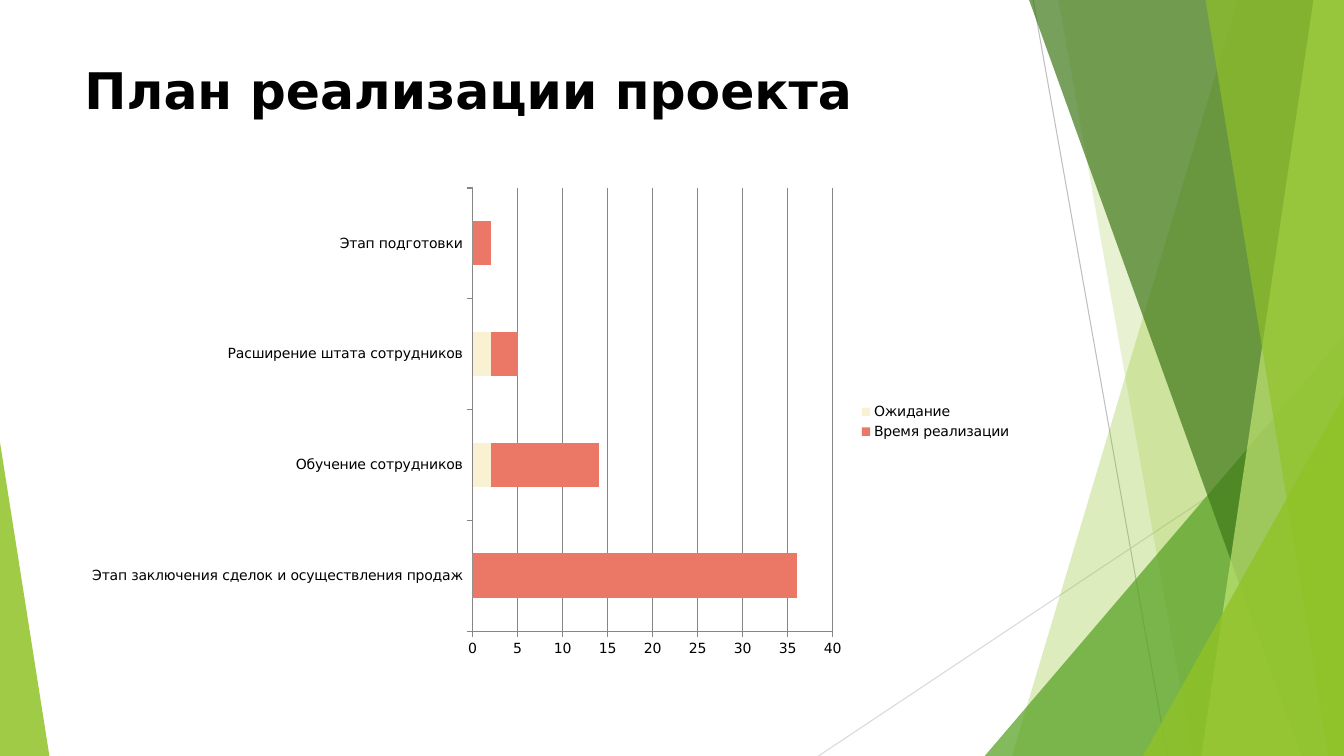
from collections import namedtuple

from lxml.etree import SubElement
from pptx import Presentation
from pptx.chart.data import CategoryChartData
from pptx.dml.color import RGBColor
from pptx.enum.chart import XL_CHART_TYPE, XL_LEGEND_POSITION, XL_TICK_MARK
from pptx.enum.shapes import MSO_CONNECTOR, MSO_SHAPE
from pptx.enum.text import MSO_ANCHOR, PP_ALIGN
from pptx.oxml.ns import qn
from pptx.util import Pt

Box = namedtuple("Box", "left top width height")

FONT = "DejaVu Sans"
BLACK, AXIS_GRAY = "000000", "868686"
LIME, GREEN, DARK_GREEN, PALE_LIME = "90C226", "54A021", "3F7819", "C0E474"

STAGES = [
    "Этап заключения сделок и осуществления продаж",
    "Обучение сотрудников",
    "Расширение штата сотрудников",
    "Этап подготовки",
]
DURATIONS = [
    ("Ожидание", (0, 2, 2, 0), "FAF1D2"),
    ("Время реализации", (36, 12, 3, 2), "EB7766"),
]


def rgb(hex_color):
    return RGBColor.from_string(hex_color)


def style_facet(facet, color, opacity):
    """Give a facet a translucent fill without line or shadow; opacity is in percent."""
    facet.fill.solid()
    facet.fill.fore_color.rgb = rgb(color)
    color_node = facet.fill._xPr.find(qn("a:solidFill"))[0]
    SubElement(color_node, qn("a:alpha"), val=str(opacity * 1000))
    facet.line.fill.background()
    facet.shadow.inherit = False


def add_ray(slide, box, start, end, color):
    """Draw a thin line between two points measured from the box corner."""
    ray = slide.shapes.add_connector(
        MSO_CONNECTOR.STRAIGHT,
        Pt(box.left + start[0]), Pt(box.top + start[1]),
        Pt(box.left + end[0]), Pt(box.top + end[1]),
    )
    ray.line.color.rgb = rgb(color)
    ray.line.width = Pt(0.75)
    SubElement(ray._element.spPr, qn("a:effectLst"))


def add_band(slide, box, top_left, bottom_left, color, opacity):
    """Fill from a slanted left edge to the right side of the box."""
    bottom = box.top + box.height
    right = box.left + box.width
    corners = [
        (box.left + top_left, box.top),
        (right, box.top),
        (right, bottom),
        (box.left + bottom_left, bottom),
    ]
    points = [(Pt(x), Pt(y)) for x, y in corners]
    outline = slide.shapes.build_freeform(*points[0])
    outline.add_line_segments(points[1:], close=True)
    style_facet(outline.convert_to_shape(), color, opacity)


def add_corner(slide, box, apex, color, opacity):
    """Fill the box with a triangle whose apex lies at a share of its width."""
    corner = slide.shapes.add_shape(
        MSO_SHAPE.ISOSCELES_TRIANGLE, *(Pt(length) for length in box)
    )
    corner.adjustments[0] = apex
    style_facet(corner, color, opacity)


def add_right_facets(slide, box):
    def add_right_corner(left, top, color, opacity):
        corner_box = Box(
            box.left + left, box.top + top, box.width - left, box.height - top
        )
        add_corner(slide, corner_box, 1, color, opacity)

    add_ray(slide, box, (154, 0), (249.8, box.height), "BFBFBF")
    add_ray(slide, box, (box.width, 290.2), (0.6, box.height), "D9D9D9")
    add_band(slide, box, 300.2, 138.9, LIME, 30)
    add_band(slide, box, 172, 267.8, LIME, 20)
    add_right_corner(119.4, 239.8, GREEN, 72)
    add_band(slide, box, 151.1, 345.5, DARK_GREEN, 70)
    add_band(slide, box, 354.2, 274.2, PALE_LIME, 70)
    add_band(slide, box, 277.1, 365, LIME, 65)
    add_right_corner(232.5, 283, LIME, 80)


def add_title(slide, box):
    title = slide.shapes.add_textbox(*(Pt(length) for length in box))
    frame = title.text_frame
    frame.word_wrap = True
    frame.vertical_anchor = MSO_ANCHOR.MIDDLE
    frame.text = "План реализации проекта"
    heading = frame.paragraphs[0]
    heading.alignment = PP_ALIGN.LEFT
    font = heading.runs[0].font
    font.name, font.size, font.bold = FONT, Pt(36), True
    font.color.rgb = rgb(BLACK)


def fix_plot_area(chart, **shares):
    """Place the inner plot area by shares of the chart size."""
    plot_area = chart._chartSpace.chart.plotArea
    layout = plot_area.find(qn("c:layout"))
    if layout is None:
        layout = SubElement(plot_area, qn("c:layout"))
        plot_area.insert(0, layout)
    manual = SubElement(layout, qn("c:manualLayout"))
    SubElement(manual, qn("c:layoutTarget"), val="inner")
    for mode in ("xMode", "yMode"):
        SubElement(manual, qn(f"c:{mode}"), val="edge")
    for side, share in shares.items():
        SubElement(manual, qn(f"c:{side}"), val=str(share))


def add_plan_chart(slide, box):
    plan = CategoryChartData()
    plan.categories = STAGES
    for name, weeks, _ in DURATIONS:
        plan.add_series(name, weeks)
    chart = slide.shapes.add_chart(
        XL_CHART_TYPE.BAR_STACKED, *(Pt(length) for length in box), plan
    ).chart
    chart.has_title = False
    chart.font.name, chart.font.size = FONT, Pt(10)
    chart.font.color.rgb = rgb(BLACK)

    bars = chart.plots[0]
    bars.gap_width, bars.overlap = 150, 100
    bars.vary_by_categories = False
    for series, (_, _, color) in zip(bars.series, DURATIONS):
        series.format.fill.solid()
        series.format.fill.fore_color.rgb = rgb(color)

    for axis in (chart.category_axis, chart.value_axis):
        axis.major_tick_mark = XL_TICK_MARK.OUTSIDE
        axis.minor_tick_mark = XL_TICK_MARK.NONE
        axis.format.line.color.rgb = rgb(AXIS_GRAY)
    scale = chart.value_axis
    scale.minimum_scale, scale.maximum_scale, scale.major_unit = 0, 40, 5
    scale.has_major_gridlines = True
    scale.major_gridlines.format.line.color.rgb = rgb(AXIS_GRAY)

    chart.has_legend = True
    chart.legend.position = XL_LEGEND_POSITION.RIGHT
    chart.legend.include_in_layout = False
    fix_plot_area(chart, x=0.42, y=0.02, w=0.38, h=0.91)


def main():
    deck = Presentation()
    deck.slide_width, deck.slide_height = Pt(960), Pt(540)
    slide = deck.slides.add_slide(deck.slide_layouts[6])
    add_right_facets(slide, Box(584, 0, 376, 540))
    add_corner(slide, Box(0, 316, 35.3, 224), 0, LIME, 85)
    add_title(slide, Box(53.3, 33.8, 676.8, 59.8))
    add_plan_chart(slide, Box(53.3, 127.4, 676.8, 347.8))
    deck.save("out.pptx")


if __name__ == "__main__":
    main()
